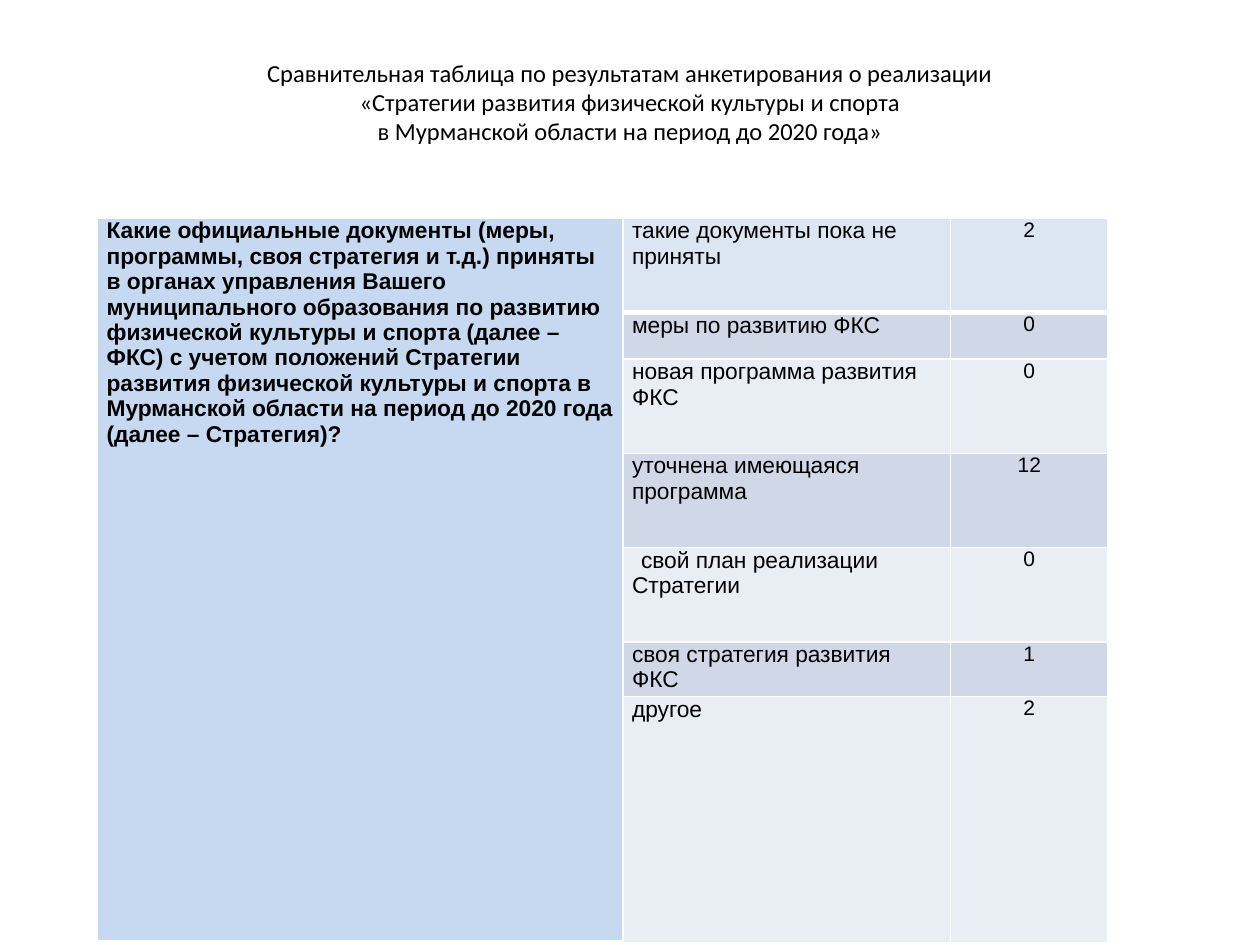
from lxml.etree import SubElement
from pptx import Presentation
from pptx.dml.color import RGBColor
from pptx.enum.text import MSO_ANCHOR, PP_ALIGN
from pptx.oxml import parse_xml
from pptx.oxml.ns import nsdecls
from pptx.util import Cm, Pt

BLACK = RGBColor(0x00, 0x00, 0x00)
QUESTION_BLUE = RGBColor(0xC6, 0xD9, 0xF1)
FIRST_ROW_BLUE = RGBColor(0xDC, 0xE6, 0xF2)
DARK_BAND = RGBColor(0xD0, 0xD8, 0xE8)
LIGHT_BAND = RGBColor(0xE9, 0xED, 0xF4)

TITLE_LINES = [
    "Сравнительная таблица по результатам анкетирования о реализации",
    "«Стратегии развития физической культуры и спорта",
    "в Мурманской области на период до 2020 года»",
]
QUESTION = (
    "Какие официальные документы (меры, программы, своя стратегия и т.д.) "
    "приняты в органах управления Вашего муниципального образования по развитию "
    "физической культуры и спорта (далее – ФКС) с учетом положений Стратегии "
    "развития физической культуры и спорта в Мурманской области на период "
    "до 2020 года (далее – Стратегия)?"
)
TALL, SHORT = 1.9, 0.94
# Answer, count, row height in cm, first-line indent in cm
ANSWERS = [
    ("такие документы пока не приняты", 2, TALL, 0),
    ("меры по развитию ФКС", 0, SHORT, 0),
    ("новая программа развития ФКС", 0, TALL, 0),
    ("уточнена имеющаяся программа", 12, TALL, 0),
    ("свой план реализации Стратегии", 0, TALL, 0.18),
    ("своя стратегия развития ФКС", 1, SHORT, 0),
    ("другое", 2, SHORT, 0),
]
COLUMN_SHARES = [0.52, 0.324, 0.156]


def set_attributes(target, formats):
    for name, value in formats.items():
        setattr(target, name, value)


def write_text(paragraph, text, font_name, size, bold=False, align=PP_ALIGN.LEFT):
    paragraph.text = text
    paragraph.alignment = align
    for run in paragraph.runs:
        set_attributes(run.font, {"name": font_name, "size": Pt(size), "bold": bold})
        run.font.color.rgb = BLACK


def set_borders(cell, top, bottom):
    properties = cell._tc.get_or_add_tcPr()
    widths = {"lnL": 1, "lnR": 1, "lnT": top, "lnB": bottom}
    for position, (side, width) in enumerate(widths.items()):
        line = parse_xml(f'<a:{side} {nsdecls("a")} w="{Pt(width)}"/>')
        fill = SubElement(line, "{http://schemas.openxmlformats.org/drawingml/2006/main}solidFill")
        color = SubElement(fill, "{http://schemas.openxmlformats.org/drawingml/2006/main}srgbClr")
        color.set("val", "FFFFFF")
        properties.insert(position, line)


def fill_cell(cell, text, color, size, top=1, bottom=1, **text_format):
    set_attributes(cell, {
        "margin_left": Cm(0.18), "margin_right": Cm(0.18),
        "margin_top": 0, "margin_bottom": 0,
        "vertical_anchor": MSO_ANCHOR.TOP,
    })
    cell.fill.solid()
    cell.fill.fore_color.rgb = color
    set_borders(cell, top, bottom)
    write_text(cell.text_frame.paragraphs[0], text, "Arial", size, **text_format)


def add_title(slide, left, top, width, height):
    frame = slide.shapes.add_textbox(left, top, width, height).text_frame
    # The deeper bottom margin lifts the title above the middle of its box
    set_attributes(frame, {
        "word_wrap": True, "vertical_anchor": MSO_ANCHOR.MIDDLE,
        "margin_bottom": Cm(0.72),
    })
    write_text(frame.paragraphs[0], "\v".join(TITLE_LINES), "Calibri", 14,
               align=PP_ALIGN.CENTER)


def add_survey_table(slide, left, top, width, height):
    table = slide.shapes.add_table(
        len(ANSWERS), len(COLUMN_SHARES), left, top, width, height).table
    set_attributes(table, {"first_row": False, "horz_banding": False})
    for column, share in zip(table.columns, COLUMN_SHARES):
        column.width = round(width * share)

    # Question spanning all answers
    table.cell(0, 0).merge(table.cell(len(ANSWERS) - 1, 0))
    fill_cell(table.cell(0, 0), QUESTION, QUESTION_BLUE, 13, bottom=3, bold=True)

    # Answers and counts, with a thick rule under the first row
    for index, (answer, count, row_height, indent) in enumerate(ANSWERS):
        table.rows[index].height = Cm(row_height)
        band = DARK_BAND if index % 2 else LIGHT_BAND
        color = band if index else FIRST_ROW_BLUE
        rules = {"top": 3 if index == 1 else 1, "bottom": 1 if index else 3}
        answer_cell = table.cell(index, 1)
        fill_cell(answer_cell, answer, color, 13, **rules)
        if indent:
            paragraph = answer_cell.text_frame.paragraphs[0]
            paragraph._p.get_or_add_pPr().set("indent", str(Cm(indent)))
        fill_cell(table.cell(index, 2), str(count), color, 12,
                  align=PP_ALIGN.CENTER, **rules)


def main():
    presentation = Presentation()
    presentation.slide_width, presentation.slide_height = Cm(25.4), Cm(19.05)
    slide = presentation.slides.add_slide(presentation.slide_layouts[6])
    add_title(slide, Cm(1.27), Cm(0.76), Cm(22.86), Cm(3.18))
    add_survey_table(slide, Cm(1.97), Cm(4.4), Cm(20.37), Cm(10.44))
    presentation.save("out.pptx")


if __name__ == "__main__":
    main()
